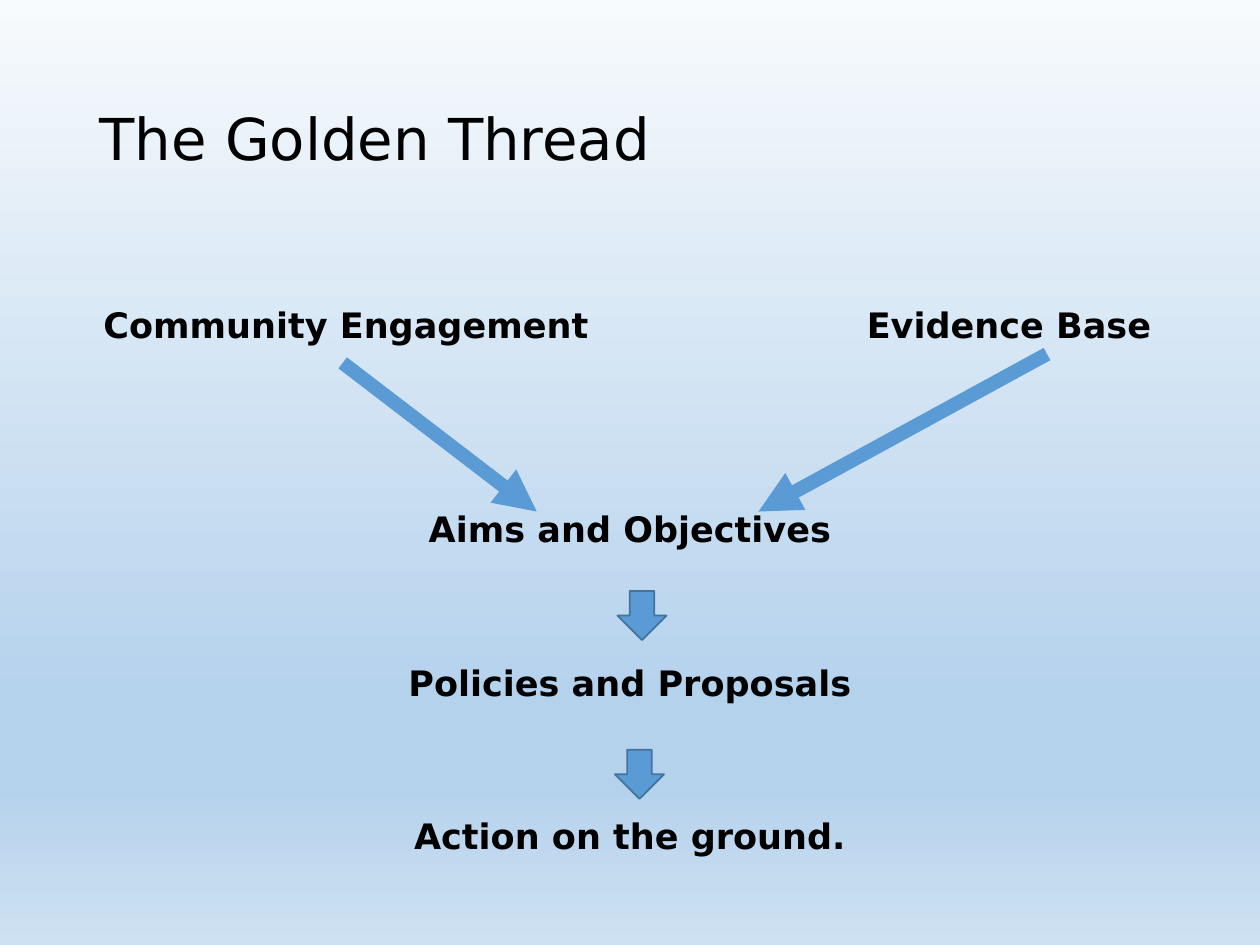
from pptx import Presentation
from pptx.dml.color import RGBColor
from pptx.enum.shapes import MSO_CONNECTOR, MSO_SHAPE
from pptx.enum.text import MSO_ANCHOR, MSO_AUTO_SIZE, PP_ALIGN
from pptx.oxml.ns import qn
from pptx.util import Inches, Pt
from lxml.etree import SubElement

BLACK = RGBColor(0x00, 0x00, 0x00)
BLUE = RGBColor(0x5B, 0x9B, 0xD5)
DARK_BLUE = RGBColor(0x43, 0x73, 0x9E)
SKY = [(0, RGBColor(0xF7, 0xFA, 0xFD)), (74, RGBColor(0xB5, 0xD2, 0xEC)),
       (83, RGBColor(0xB5, 0xD2, 0xEC)), (100, RGBColor(0xCE, 0xE1, 0xF2))]
FONT = "DejaVu Sans"
LEFT, WIDTH = Inches(0.69), Inches(8.62)
BODY_TOP, FIRST_ROW = Inches(1.56), Inches(0.89)


def write(paragraph, text, size=20, bold=False, align=PP_ALIGN.LEFT, before=0):
    paragraph.alignment = align
    paragraph.line_spacing = 0.9
    paragraph.space_before = Pt(before)
    paragraph.space_after = Pt(0)
    run = paragraph.add_run()
    run.text = text
    run.font.name = FONT
    run.font.size = Pt(size)
    run.font.bold = bold
    run.font.color.rgb = BLACK


prs = Presentation()
prs.slide_width, prs.slide_height = Inches(10), Inches(7.5)
slide = prs.slides.add_slide(prs.slide_layouts[1])
title, body = slide.placeholders

# Background: four-stop gradient from top to bottom
sky = slide.background.fill
sky.gradient()
sky.gradient_angle = 270
stops = slide.element.find(".//" + qn("a:gsLst"))
for stop in list(stops):
    stops.remove(stop)
for percent, color in SKY:
    stop = SubElement(stops, qn("a:gs"), pos=str(percent * 1000))
    SubElement(stop, qn("a:srgbClr"), val=str(color))

# Title
title.left, title.top, title.width, title.height = LEFT, Inches(0.4), WIDTH, Inches(1.45)
title.text_frame.vertical_anchor = MSO_ANCHOR.MIDDLE
title.text_frame.auto_size = MSO_AUTO_SIZE.NONE
write(title.text_frame.paragraphs[0], "The Golden Thread", size=33)

# Steps of the thread: first source, then the chain below
body.left, body.top, body.width, body.height = LEFT, BODY_TOP, WIDTH, Inches(5.49)
steps = body.text_frame
steps.auto_size = MSO_AUTO_SIZE.NONE
steps.vertical_anchor = MSO_ANCHOR.TOP
steps.margin_top = FIRST_ROW
steps.margin_left = steps.margin_right = Inches(0.13)
CHAIN = [("Community Engagement", PP_ALIGN.LEFT, 7.5),
         ("Aims and Objectives", PP_ALIGN.CENTER, 95),
         ("Policies and Proposals", PP_ALIGN.CENTER, 66),
         ("Action on the ground.", PP_ALIGN.CENTER, 66)]
for i, (text, align, before) in enumerate(CHAIN):
    step = steps.add_paragraph() if i else steps.paragraphs[0]
    write(step, text, bold=True, align=align, before=before)
    props = step._p.get_or_add_pPr()
    props.set("marL", "0")
    props.set("indent", "0")
    SubElement(props, qn("a:buNone"))

# Second source, on the row of the first
evidence = slide.shapes.add_textbox(
    Inches(6.88), BODY_TOP + FIRST_ROW, Inches(2.43), Inches(0.35)).text_frame
evidence.word_wrap = True
evidence.vertical_anchor = MSO_ANCHOR.TOP
evidence.margin_left = evidence.margin_right = 0
evidence.margin_top = evidence.margin_bottom = 0
write(evidence.paragraphs[0], "Evidence Base", bold=True, before=7.5)

# Arrows from both sources to the aims
for x1, y1, x2, y2 in [(2.72, 2.88, 4.26, 4.06), (8.31, 2.81, 6.02, 4.06)]:
    thread = slide.shapes.add_connector(
        MSO_CONNECTOR.STRAIGHT, Inches(x1), Inches(y1), Inches(x2), Inches(y2))
    thread.line.color.rgb = BLUE
    thread.line.width = Pt(8)
    SubElement(thread.line._get_or_add_ln(), qn("a:tailEnd"), type="triangle")
    SubElement(thread._element.spPr, qn("a:effectLst"))

# Block arrows down the chain
for x, y in [(4.9, 4.69), (4.88, 5.95)]:
    down = slide.shapes.add_shape(
        MSO_SHAPE.DOWN_ARROW, Inches(x), Inches(y), Inches(0.39), Inches(0.39))
    down.shadow.inherit = False
    down.fill.solid()
    down.fill.fore_color.rgb = BLUE
    down.line.color.rgb = DARK_BLUE
    down.line.width = Pt(1)

prs.save("out.pptx")
